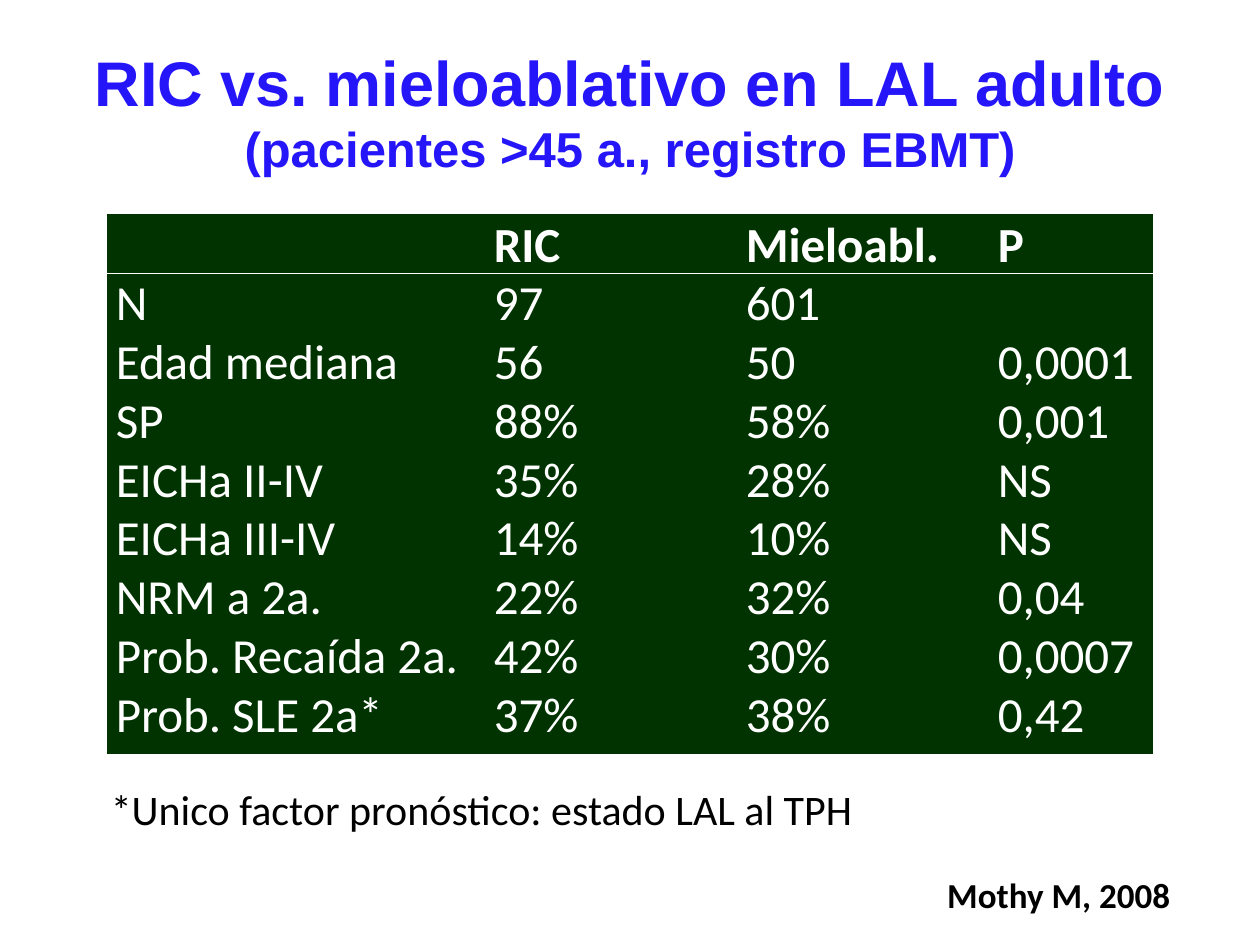
from lxml import etree
from pptx import Presentation
from pptx.dml.color import RGBColor
from pptx.enum.shapes import MSO_CONNECTOR
from pptx.enum.text import MSO_ANCHOR, PP_ALIGN
from pptx.oxml.ns import qn
from pptx.util import Pt

STRAIGHT = MSO_CONNECTOR.STRAIGHT
MIDDLE, TOP, BOTTOM = MSO_ANCHOR.MIDDLE, MSO_ANCHOR.TOP, MSO_ANCHOR.BOTTOM
CENTER = PP_ALIGN.CENTER
NO_GRID_STYLE = "{2D5ABB26-0587-4C30-8999-92F81FD0307C}"
COLORS = {"title": "2515F9", "table": "003300", "light": "FFFFFF", "dark": "000000"}


def add_run(paragraph, text, size, color, bold=False, font="Calibri"):
    run = paragraph.add_run()
    run.text = text
    run.font.size = Pt(size)
    run.font.name = font
    run.font.bold = bold
    run.font.color.rgb = RGBColor.from_string(COLORS[color])


presentation = Presentation()
presentation.slide_width, presentation.slide_height = Pt(720), Pt(540)
slide = presentation.slides.add_slide(presentation.slide_layouts[5])

# Title
title = slide.shapes.title
title.left, title.top, title.width, title.height = Pt(36), Pt(18), Pt(648), Pt(90)
title.text_frame.vertical_anchor = MIDDLE
paragraph = title.text_frame.paragraphs[0]
paragraph.alignment = CENTER
add_run(paragraph, "RIC vs. mieloablativo en LAL adulto", 36, "title", True, "Arial")
paragraph.add_line_break()
add_run(paragraph, "(pacientes >45 a., registro EBMT)", 28, "title", True, "Arial")

# Results table
results = [
    ("", "RIC", "Mieloabl.", "P"),
    ("N", "97", "601", ""),
    ("Edad mediana", "56", "50", "0,0001"),
    ("SP", "88%", "58%", "0,001"),
    ("EICHa II-IV", "35%", "28%", "NS"),
    ("EICHa III-IV", "14%", "10%", "NS"),
    ("NRM a 2a.", "22%", "32%", "0,04"),
    ("Prob. Recaída 2a.", "42%", "30%", "0,0007"),
    ("Prob. SLE 2a*", "37%", "38%", "0,42"),
]
column_widths = [216, 144, 144, 94]
row_heights = [35.4] + [33.6] * 7 + [38.2]
left, top, width = 61, 122, sum(column_widths)

frame = slide.shapes.add_table(len(results), len(column_widths), Pt(left), Pt(top),
                               Pt(width), Pt(sum(row_heights)))
table = frame.table
table.horz_banding = False
table._tbl.tblPr.find(qn("a:tableStyleId")).text = NO_GRID_STYLE
for column, column_width in zip(table.columns, column_widths):
    column.width = Pt(column_width)

for row_index, (row, height, values) in enumerate(zip(table.rows, row_heights, results)):
    row.height = Pt(height)
    is_header = row_index == 0
    for cell, value in zip(row.cells, values):
        cell.fill.solid()
        cell.fill.fore_color.rgb = RGBColor.from_string(COLORS["table"])
        cell.margin_left = Pt(5.2)
        cell.margin_right = cell.margin_top = cell.margin_bottom = 0
        cell.vertical_anchor = BOTTOM if is_header else TOP
        paragraph = cell.text_frame.paragraphs[0]
        paragraph.line_spacing = Pt(33.5)
        if value:
            add_run(paragraph, value, 28, "light", is_header)

# Rule under the header
rule = slide.shapes.add_connector(STRAIGHT, Pt(left), Pt(156.2), Pt(left + width), Pt(156.2))
rule.line.color.rgb = RGBColor.from_string(COLORS["light"])
rule.line.width = Pt(0.75)
etree.SubElement(rule._element.spPr, qn("a:effectLst"))

# Footnote and citation
notes = [
    ("*Unico factor pronóstico: estado LAL al TPH", 56.2, 444.2, 442, 36.7, 24, False),
    ("Mothy M, 2008", 534.2, 495.4, 142.6, 31.7, 20, True),
]
for text, note_left, note_top, note_width, note_height, size, bold in notes:
    box = slide.shapes.add_textbox(Pt(note_left), Pt(note_top), Pt(note_width), Pt(note_height))
    box.text_frame.word_wrap = False
    add_run(box.text_frame.paragraphs[0], text, size, "dark", bold)

presentation.save("out.pptx")
